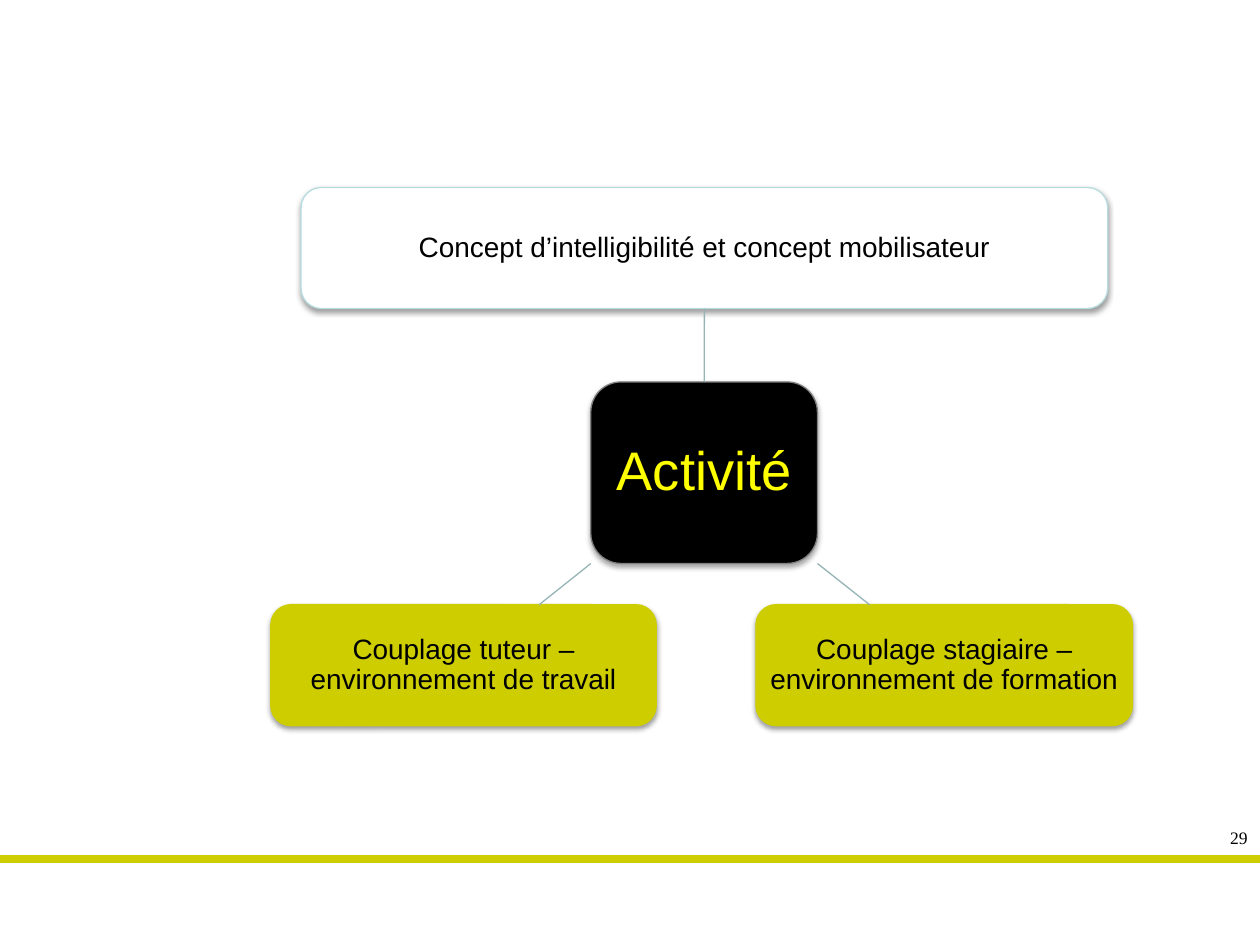
from lxml import etree
from pptx import Presentation
from pptx.dml.color import RGBColor
from pptx.enum.shapes import MSO_CONNECTOR as Conn, MSO_SHAPE as Shape
from pptx.enum.text import MSO_ANCHOR as Anchor, PP_ALIGN as Align
from pptx.oxml import parse_xml
from pptx.oxml.ns import nsdecls, qn
from pptx.util import Cm, Pt

BLACK = RGBColor(0x00, 0x00, 0x00)
WHITE = RGBColor(0xFF, 0xFF, 0xFF)
GREY = RGBColor(0x80, 0x80, 0x80)
YELLOW = RGBColor(0xFF, 0xFF, 0x00)
OLIVE = RGBColor(0xCD, 0xCD, 0x00)
AQUA = RGBColor(0xB6, 0xDC, 0xDF)
TEAL = RGBColor(0x96, 0xB3, 0xB6)

prs = Presentation()
prs.slide_width, prs.slide_height = Cm(25.4), Cm(19.05)
slide = prs.slides.add_slide(prs.slide_layouts[6])
shapes = slide.shapes


def write(frame, text, align, style):
    para = frame.paragraphs[0]
    para.alignment = align
    run = para.add_run()
    run.text = text
    run.font.color.rgb = style["color"]
    run.font.name = style["name"]
    run.font.size = Pt(style["size"])
    return para


def link(ends, color, width):
    line = shapes.add_connector(Conn.STRAIGHT, *[Cm(n) for n in ends])
    line.line.color.rgb = color
    line.line.width = Pt(width)
    etree.SubElement(line._element.spPr, qn("a:effectLst"))
    return line


# Footer band and page number
link((25.4, 17.32, 0, 17.32), OLIVE, 4.5)
page = shapes.add_textbox(Cm(24.1), Cm(16.54), Cm(1.3), Cm(0.69))
page.text_frame.word_wrap = True
write(page.text_frame, "29", Align.RIGHT,
      {"name": "Times New Roman", "size": 10, "color": BLACK})

# Boxes: text, place, fill, line, font size, font colour, inset, shadow
boxes = [
    ("Activité", (11.91, 7.7, 4.57, 3.66),
     BLACK, GREY, 31, YELLOW, 0.23, (1.8, 35)),
    ("Concept d’intelligibilité et concept mobilisateur",
     (6.07, 3.78, 16.26, 2.44), WHITE, AQUA, 16, BLACK, 0.11, (1.6, 38)),
    ("Couplage stagiaire – environnement de formation",
     (15.24, 12.19, 7.59, 2.44), OLIVE, OLIVE, 16, BLACK, 0.11, (1.6, 38)),
    ("Couplage tuteur – environnement de travail",
     (5.46, 12.19, 7.77, 2.44), OLIVE, OLIVE, 16, BLACK, 0.11, (1.6, 38)),
]
drawn = []
for text, place, fill, edge, size, color, inset, (dist, alpha) in boxes:
    box = shapes.add_shape(Shape.ROUNDED_RECTANGLE, *[Cm(n) for n in place])
    box.fill.solid()
    box.fill.fore_color.rgb = fill
    box.line.color.rgb = edge
    box.line.width = Pt(0.75)
    # Soft shadow straight below
    box._element.spPr.append(parse_xml(
        f'<a:effectLst {nsdecls("a")}><a:outerShdw blurRad="{Pt(3.1)}" '
        f'dist="{Pt(dist)}" dir="5400000" rotWithShape="0">'
        f'<a:srgbClr val="000000"><a:alpha val="{alpha * 1000}"/>'
        '</a:srgbClr></a:outerShdw></a:effectLst>'))
    frame = box.text_frame
    form = {"word_wrap": True, "vertical_anchor": Anchor.MIDDLE}
    for side in ("left", "top", "right", "bottom"):
        form[f"margin_{side}"] = Cm(inset)
    for key, value in form.items():
        setattr(frame, key, value)
    para = write(frame, text, Align.CENTER,
                 {"name": "Arial", "size": size, "color": color})
    para.line_spacing = 0.9
    drawn.append(box)

# Links from the centre box
core, top = drawn[:2]
stem = link((14.2, 7.7, 14.2, 6.22), TEAL, 0.75)
stem.begin_connect(core, 0)
stem.end_connect(top, 2)
for start, end in ((16.48, 17.53), (11.91, 10.87)):
    link((start, 11.36, end, 12.19), TEAL, 0.75)

prs.save("out.pptx")
